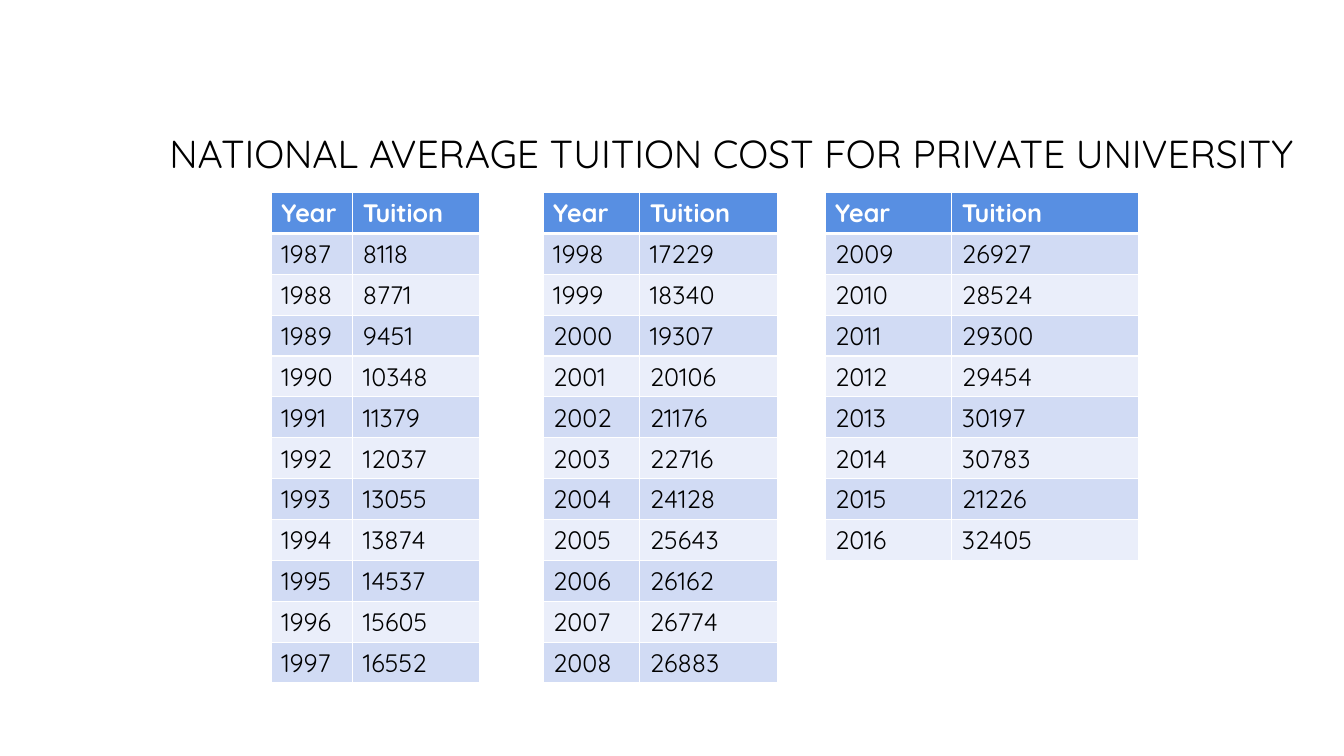
from lxml import etree
from pptx import Presentation
from pptx.dml.color import RGBColor
from pptx.enum.text import MSO_ANCHOR, PP_ALIGN
from pptx.oxml.ns import qn
from pptx.util import Inches, Pt

RIGHT = PP_ALIGN.RIGHT
TOP = MSO_ANCHOR.TOP
FONT = "Quicksand"
COLORS = {
    "text": "000000",
    "paper": "FFFFFF",
    "header": "588FE2",
    "odd": "D1DBF4",
    "even": "EAEEFA",
}
SLIDE_SIZE = (13.33, 7.5)
TITLE = "NATIONAL AVERAGE TUITION COST FOR PRIVATE UNIVERSITY"
TITLE_BOX = (0.34, 1.29, 12.59, 0.99)
TABLE_BOX = (2.69, 1.91, 8.6, 4.87)
COLUMN_WIDTHS = [0.81, 1.26, 0.63, 0.96, 1.37, 0.47, 1.26, 1.85]
HEADINGS = ("Year", "Tuition")
FIRST_YEAR = 1987
YEARS_PER_BLOCK = 11
COLUMNS_PER_BLOCK = 3
TUITION = [
    8118, 8771, 9451, 10348, 11379, 12037, 13055, 13874, 14537, 15605, 16552,
    17229, 18340, 19307, 20106, 21176, 22716, 24128, 25643, 26162, 26774, 26883,
    26927, 28524, 29300, 29454, 30197, 30783, 21226, 32405,
]


def format_runs(paragraph, size, color, bold=False):
    """Give every run of a paragraph its font, size, colour and weight."""
    for run in paragraph.runs:
        run.font.name = FONT
        run.font.size = Pt(size)
        run.font.bold = bold
        run.font.color.rgb = RGBColor.from_string(COLORS[color])


def add_title(slide, box):
    """Place the right-aligned heading in its box."""
    shape = slide.shapes.add_textbox(*map(Inches, box))
    frame = shape.text_frame
    frame.word_wrap = True
    frame.vertical_anchor = TOP
    frame.text = TITLE
    paragraph = frame.paragraphs[0]
    paragraph.alignment = RIGHT
    paragraph.line_spacing = 0.9
    format_runs(paragraph, 27.9, "text")


def set_borders(cell, row):
    """Draw white cell borders, heavier between header and body."""
    properties = cell._tc.get_or_add_tcPr()
    heavy = {"lnB": 0, "lnT": 1}
    for side in ("lnL", "lnR", "lnT", "lnB"):
        width = 3 if heavy.get(side) == row else 1
        line = etree.SubElement(properties, qn(f"a:{side}"), w=str(Pt(width)))
        fill = etree.SubElement(line, qn("a:solidFill"))
        etree.SubElement(fill, qn("a:srgbClr"), val=COLORS["paper"])


def cell_text(row, column):
    """Return the heading, year, tuition or gap that belongs in a cell."""
    block, field = divmod(column, COLUMNS_PER_BLOCK)
    if field >= len(HEADINGS):
        return ""
    if row == 0:
        return HEADINGS[field]
    index = block * YEARS_PER_BLOCK + row - 1
    if index >= len(TUITION):
        return ""
    return str((FIRST_YEAR + index, TUITION[index])[field])


def fill_cell(cell, row, column):
    """Write and colour one table cell."""
    text = cell_text(row, column)
    band = "header" if row == 0 else ("even", "odd")[row % 2]
    set_borders(cell, row)
    cell.fill.solid()
    cell.fill.fore_color.rgb = RGBColor.from_string(COLORS[band if text else "paper"])
    if text:
        cell.text_frame.text = text
        color = "paper" if row == 0 else "text"
        format_runs(cell.text_frame.paragraphs[0], 18, color, row == 0)


def add_tuition_table(slide, box):
    """Place the year and tuition blocks side by side in one table."""
    row_count = YEARS_PER_BLOCK + 1
    frame = slide.shapes.add_table(row_count, len(COLUMN_WIDTHS), *map(Inches, box))
    table = frame.table
    table.horz_banding = False
    scale = box[2] / sum(COLUMN_WIDTHS)
    for column, width in zip(table.columns, COLUMN_WIDTHS):
        column.width = Inches(width * scale)
    for row in range(row_count):
        for column in range(len(COLUMN_WIDTHS)):
            fill_cell(table.cell(row, column), row, column)


def main():
    """Build and save the tuition slide."""
    presentation = Presentation()
    presentation.slide_width, presentation.slide_height = map(Inches, SLIDE_SIZE)
    slide = presentation.slides.add_slide(presentation.slide_layouts[6])
    add_title(slide, TITLE_BOX)
    add_tuition_table(slide, TABLE_BOX)
    presentation.save("out.pptx")


if __name__ == "__main__":
    main()
